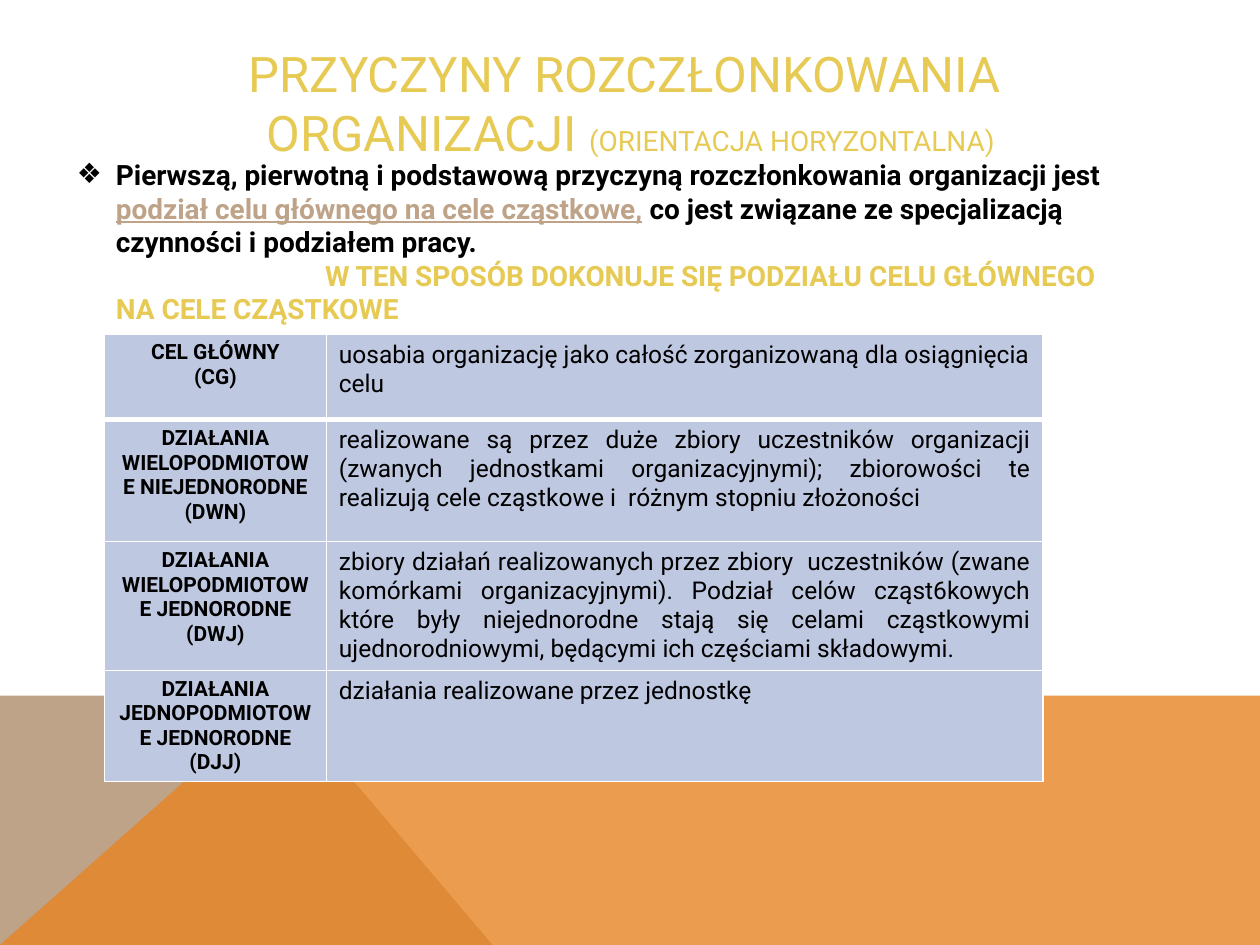
from dataclasses import dataclass

from lxml.etree import SubElement
from pptx import Presentation
from pptx.dml.color import RGBColor
from pptx.enum.text import MSO_ANCHOR, MSO_AUTO_SIZE, PP_ALIGN as Align
from pptx.oxml.ns import qn
from pptx.util import Inches, Pt


@dataclass(frozen=True)
class Theme:
    """Colours, font and type sizes of the slide."""
    font: str = "Roboto"
    gold: str = "E6CA54"
    tan: str = "BEA388"
    orange: str = "E68422"
    cell: str = "BFC8E1"
    black: str = "000000"
    white: str = "FFFFFF"
    title: int = 28
    body: int = 16
    label: int = 12
    detail: int = 14


THEME = Theme()
LEAD = [
    ("Pierwszą, pierwotną i podstawową przyczyną rozczłonkowania organizacji jest ", THEME.black, False),
    ("podział celu głównego na cele cząstkowe,", THEME.tan, True),
    (" co jest związane ze specjalizacją czynności i podziałem pracy.", THEME.black, False),
]
CONCLUSION = [("W TEN SPOSÓB DOKONUJE SIĘ PODZIAŁU CELU GŁÓWNEGO NA CELE CZĄSTKOWE", THEME.gold, False)]
ROWS = [
    (0.68, "CEL GŁÓWNY\n(CG)", Align.LEFT,
     "uosabia organizację jako całość zorganizowaną dla osiągnięcia celu"),
    (0.97, "DZIAŁANIA WIELOPODMIOTOWE NIEJEDNORODNE (DWN)", Align.JUSTIFY,
     "realizowane są przez duże zbiory uczestników organizacji (zwanych jednostkami "
     "organizacyjnymi); zbiorowości te realizują cele cząstkowe i  różnym stopniu złożoności"),
    (1.02, "DZIAŁANIA WIELOPODMIOTOWE JEDNORODNE\n(DWJ)", Align.JUSTIFY,
     "zbiory działań realizowanych przez zbiory  uczestników (zwane komórkami organizacyjnymi). "
     "Podział celów cząst6kowych które były niejednorodne stają się celami cząstkowymi "
     "ujednorodniowymi, będącymi ich częściami składowymi."),
    (0.88, "DZIAŁANIA JEDNOPODMIOTOWE JEDNORODNE (DJJ)", Align.LEFT,
     "działania realizowane przez jednostkę"),
]


def rgb(code):
    """Turn a hex code into a colour."""
    return RGBColor.from_string(code)


def style_font(font, size, color, bold=False):
    """Set the theme font with a size, colour and weight."""
    font.name, font.size, font.bold = THEME.font, Pt(size), bold
    font.color.rgb = rgb(color)


def place(shape, box):
    """Move a placeholder to a box given in inches."""
    shape.left, shape.top, shape.width, shape.height = map(Inches, box)
    shape.text_frame.word_wrap = True
    shape.text_frame.auto_size = MSO_AUTO_SIZE.NONE


def add_polygon(page, points, color, layer, opacity=100):
    """Draw a filled outline at a given layer from the back."""
    start, *rest = [(Inches(x), Inches(y)) for x, y in points]
    builder = page.shapes.build_freeform(*start)
    builder.add_line_segments(rest, close=True)
    shape = builder.convert_to_shape()
    shape.shadow.inherit = False
    shape.fill.solid()
    shape.fill.fore_color.rgb = rgb(color)
    shape.line.fill.background()
    if opacity < 100:
        tint = shape.element.spPr.find(".//" + qn("a:srgbClr"))
        SubElement(tint, qn("a:alpha"), val=str(opacity * 1000))
    page.shapes.element.insert(2 + layer, shape.element)


def add_backdrop(page, box):
    """Fill the foot of the page with two overlapping bands."""
    left, top, width, height = box
    right, bottom, peak = left + width, top + height, left + 2.23
    add_polygon(page, [(left, bottom), (left, top), (peak, top), (left + 3.91, bottom)], THEME.tan, 0)
    add_polygon(page, [(left, bottom), (peak, top), (right, top), (right, bottom)], THEME.orange, 1, 80)


def add_title(page, box):
    """Fill the title with a heading and a smaller qualifier."""
    title = page.shapes.title
    place(title, box)
    title.text_frame.vertical_anchor = MSO_ANCHOR.MIDDLE
    para = title.text_frame.paragraphs[0]
    para.alignment = Align.CENTER
    style_font(para.font, THEME.title, THEME.gold)
    para.add_run().text = "PRZYCZYNY ROZCZŁONKOWANIA "
    para.add_line_break()
    para.add_run().text = "ORGANIZACJI "
    span = para.add_run()
    span.text = "(ORIENTACJA HORYZONTALNA)"
    span.font.size = Pt(THEME.body)


def fill_paragraph(para, spans, indent, bullet=None):
    """Write bold coloured spans with a first-line indent and optional bullet."""
    para.alignment = Align.LEFT
    para.space_before = Pt(0)
    style_font(para.font, THEME.body, THEME.black, True)
    for text, color, underline in spans:
        span = para.add_run()
        span.text = text
        span.font.color.rgb = rgb(color)
        if underline:
            span.font.underline = True
    props = para._p.get_or_add_pPr()
    props.set("marL", str(Inches(0.31)))
    props.set("indent", str(Inches(indent)))
    mark = SubElement(props, qn("a:buChar" if bullet else "a:buNone"))
    if bullet:
        mark.set("char", bullet)
    props.append(props.find(qn("a:defRPr")))


def add_body(page, box):
    """Fill the body with the bulleted reason and its conclusion."""
    body = page.placeholders[1]
    place(body, box)
    frame = body.text_frame
    frame.vertical_anchor = MSO_ANCHOR.TOP
    fill_paragraph(frame.paragraphs[0], LEAD, -0.31, "❖")
    fill_paragraph(frame.add_paragraph(), CONCLUSION, 1.66)


def set_borders(cell, widths):
    """Give a cell white borders with a width for each side."""
    props = cell._tc.get_or_add_tcPr()
    for side, width in zip("LRTB", widths):
        line = SubElement(props, qn("a:ln" + side), w=str(Pt(width)))
        fill = SubElement(line, qn("a:solidFill"))
        SubElement(fill, qn("a:srgbClr"), val=THEME.white)


def fill_cell(cell, text, size, align, bold):
    """Write and colour one table cell."""
    cell.text = text
    for para in cell.text_frame.paragraphs:
        para.alignment = align
        style_font(para.font, size, THEME.black, bold)
    cell.fill.solid()
    cell.fill.fore_color.rgb = rgb(THEME.cell)


def add_goals_table(page, box):
    """Build the table of goals and actions."""
    table = page.shapes.add_table(len(ROWS), 2, *map(Inches, box)).table
    table.first_row = table.horz_banding = False
    label_width = 1.76
    table.columns[0].width = Inches(label_width)
    table.columns[1].width = Inches(box[2] - label_width)
    for index, (height, label, align, detail) in enumerate(ROWS):
        table.rows[index].height = Inches(height)
        widths = (1, 1, 3 if index == 1 else 1, 3 if index == 0 else 1)
        for column in range(2):
            set_borders(table.cell(index, column), widths)
        fill_cell(table.cell(index, 0), label, THEME.label, Align.CENTER, True)
        fill_cell(table.cell(index, 1), detail, THEME.detail, align, False)


def main():
    """Build and save the deck."""
    deck = Presentation()
    deck.slide_width, deck.slide_height = Inches(10), Inches(7.5)
    page = deck.slides.add_slide(deck.slide_layouts[1])
    add_backdrop(page, (0, 5.52, 10, 1.98))
    add_title(page, (0.2, 0.4, 9.61, 0.83))
    add_body(page, (0.51, 1.2, 8.61, 3.89))
    add_goals_table(page, (0.83, 2.65, 7.45, sum(row[0] for row in ROWS)))
    deck.save("out.pptx")


if __name__ == "__main__":
    main()
